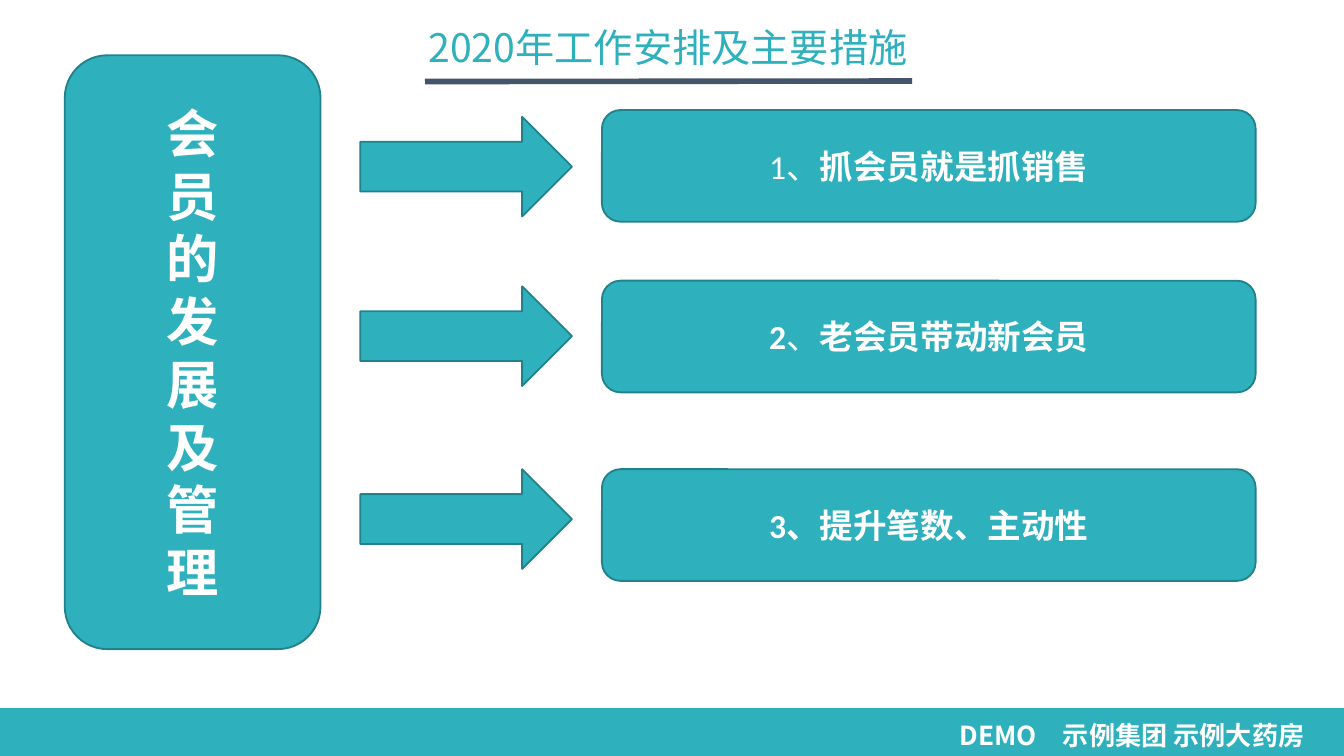
"""Build the slide on growing and managing the member base."""
from dataclasses import dataclass

from lxml import etree
from pptx import Presentation
from pptx import util as u
from pptx.dml.color import RGBColor
from pptx.enum import shapes, text
from pptx.oxml.ns import qn

Pt = u.Pt


@dataclass(frozen=True)
class Theme:
    teal: str = "2EB0BD"
    edge: str = "22828C"
    navy: str = "44546A"
    white: str = "FFFFFF"
    sans: str = "Noto Sans CJK SC"
    body: str = "Calibri"
    title: int = 21
    head: int = 28
    item: int = 18
    foot: int = 14


THEME = Theme()
KIND = shapes.MSO_SHAPE
ITEMS = [
    (62.6, 59.0, [("1、", False), ("抓会员就是抓销售", True)]),
    (153.4, 150.4, [("2", True), ("、", False), ("老会员带动新会员", True)]),
    (251.4, 251.4, [("3、提升笔数、主动性", True)]),
]


def write(shape, lines, *, size, font=THEME.body, color=THEME.white,
          align=text.PP_ALIGN.CENTER, anchor=text.MSO_ANCHOR.MIDDLE,
          pad=(7.2, 3.6), space=None):
    """Fill a shape with lines, each a list of (words, bold) runs."""
    frame = shape.text_frame
    frame.word_wrap = True
    frame.vertical_anchor = anchor
    frame.margin_left = frame.margin_right = Pt(pad[0])
    frame.margin_top = frame.margin_bottom = Pt(pad[1])
    for i, runs in enumerate(lines):
        para = frame.add_paragraph() if i else frame.paragraphs[0]
        para.alignment = align
        para.line_spacing = space
        for words, bold in runs:
            run = para.add_run()
            run.text = words
            run.font.size = Pt(size)
            run.font.bold = bold
            run.font.name = font
            run.font.color.rgb = RGBColor.from_string(color)
            east = etree.SubElement(run.font._element, qn("a:ea"))
            east.set("typeface", font)


def block(slide, kind, box, edge=THEME.edge):
    """Add a teal shape, outlined unless edge is None."""
    shape = slide.shapes.add_shape(kind, *map(Pt, box))
    shape.shadow.inherit = False
    shape.fill.solid()
    shape.fill.fore_color.rgb = RGBColor.from_string(THEME.teal)
    if edge:
        shape.line.color.rgb = RGBColor.from_string(edge)
        shape.line.width = Pt(1)
    else:
        shape.line.fill.background()
    return shape


def label(slide, box, words, bold=False, **style):
    """Add a one-line text box."""
    shape = slide.shapes.add_textbox(*map(Pt, box))
    write(shape, [[(words, bold)]], **style)


def rule(slide, ends):
    """Add the line below the title."""
    line = slide.shapes.add_connector(
        shapes.MSO_CONNECTOR.STRAIGHT, *map(Pt, ends))
    line.line.color.rgb = RGBColor.from_string(THEME.navy)
    line.line.width = Pt(3)
    etree.SubElement(line._element.spPr, qn("a:effectLst"))


def main():
    """Build and save the slide."""
    deck = Presentation()
    deck.slide_width, deck.slide_height = Pt(720), Pt(405)
    slide = deck.slides.add_slide(deck.slide_layouts[6])

    block(slide, KIND.RECTANGLE, (0, 379.4, 720, 26.6), edge=None)
    label(slide, (509, 382.3, 216.7, 22.3), "DEMO　示例集团 示例大药房", True,
          size=THEME.foot, font=THEME.sans, align=text.PP_ALIGN.LEFT,
          anchor=text.MSO_ANCHOR.TOP, pad=(5, 2.9))
    label(slide, (121.7, 8.6, 472.3, 36), "2020年工作安排及主要措施",
          size=THEME.title, font=THEME.sans, color=THEME.teal,
          pad=(0, 3.6), space=0.9)
    rule(slide, (227.7, 43.7, 488.7, 43.4))

    head = block(slide, KIND.FLOWCHART_ALTERNATE_PROCESS,
                 (34.7, 29.6, 137, 318.2))
    write(head, [[(char, True)] for char in "会员的发展及管理"],
          size=THEME.head)

    for tip, top, runs in ITEMS:
        block(slide, KIND.RIGHT_ARROW, (193, tip, 113.4, 53.4))
        card = block(slide, KIND.FLOWCHART_ALTERNATE_PROCESS,
                     (322.5, top, 350.2, 59.8))
        write(card, [runs], size=THEME.item)

    deck.save("out.pptx")


if __name__ == "__main__":
    main()
